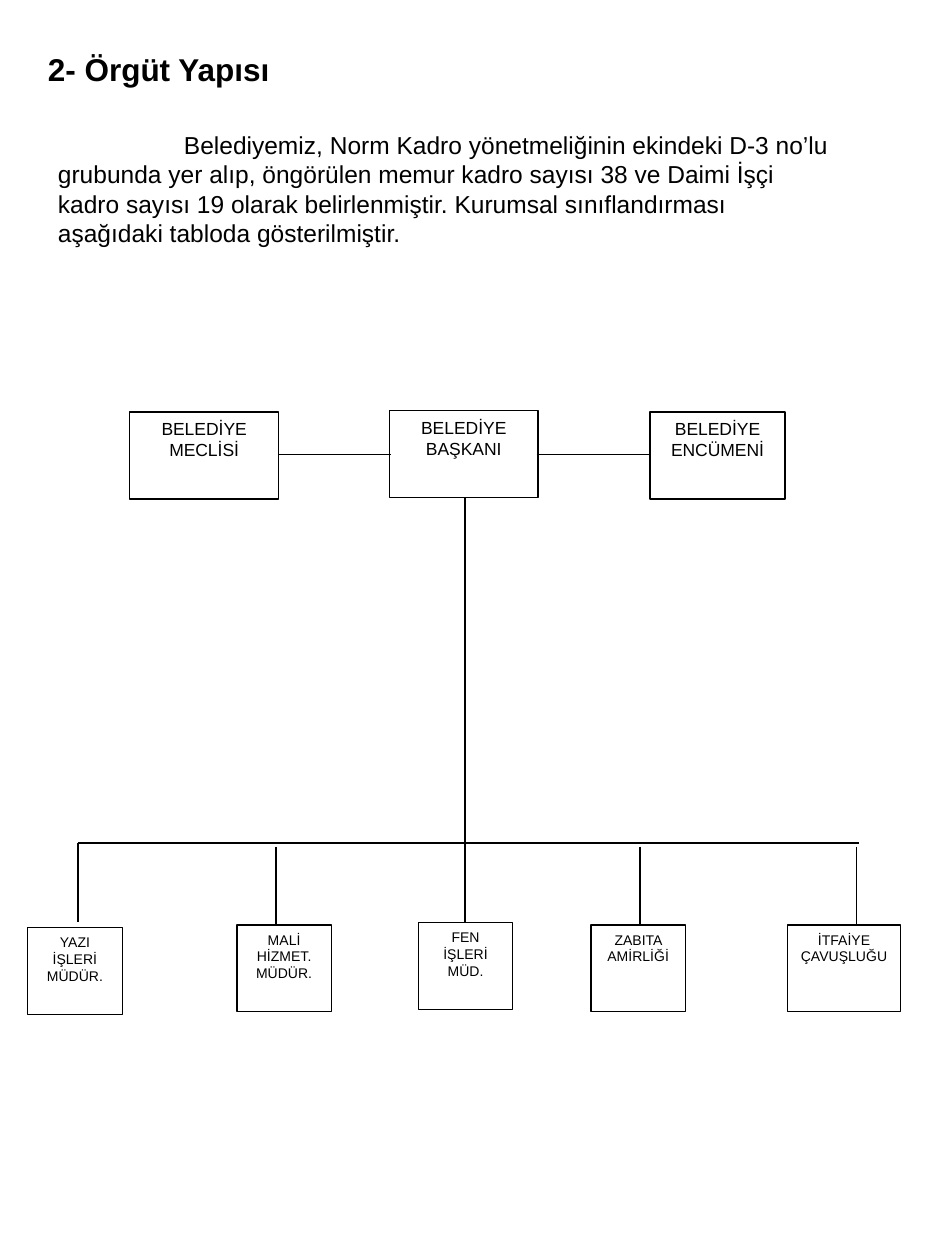
"""Build the municipal organisation chart slide."""
from lxml.etree import SubElement as Sub
from pptx import Presentation
from pptx.dml.color import RGBColor
from pptx.enum.shapes import MSO_CONNECTOR as Link, MSO_SHAPE as Form
from pptx.enum.text import MSO_ANCHOR as Anchor, MSO_AUTO_SIZE as Fit, PP_ALIGN as Align
from pptx.oxml.ns import qn
from pptx.util import Pt

PX = 9144
BLACK = RGBColor(0, 0, 0)
WHITE = RGBColor(255, 255, 255)
FRAME = {"word_wrap": True, "auto_size": Fit.NONE, "vertical_anchor": Anchor.TOP}


def place(shape, box):
    for name, val in zip(("left", "top", "width", "height"), box):
        setattr(shape, name, val * PX)


def write(shape, text, size, align, bold=False, wrap=True):
    frame = shape.text_frame
    frame.text = text
    for name, val in {**FRAME, "word_wrap": wrap}.items():
        setattr(frame, name, val)
    for para in frame.paragraphs:
        for name, val in {"alignment": align, "space_before": Pt(0)}.items():
            setattr(para, name, val)
        font = para.runs[0].font
        for name, val in {"name": "Arial", "size": Pt(size), "bold": bold}.items():
            setattr(font, name, val)
        font.color.rgb = BLACK


deck = Presentation()
deck.slide_width, deck.slide_height = 750 * PX, 1000 * PX
slide = deck.slides.add_slide(deck.slide_layouts[1])
title, body = slide.placeholders

place(title, (28, 35, 198, 40))
write(title, "2- Örgüt Yapısı", 18, Align.LEFT, bold=True, wrap=False)

place(body, (36, 98, 638, 104))
write(body, "Belediyemiz, Norm Kadro yönetmeliğinin ekindeki D-3 no’lu grubunda yer alıp, "
      "öngörülen memur kadro sayısı 38 ve Daimi İşçi kadro sayısı 19 olarak "
      "belirlenmiştir. Kurumsal sınıflandırması aşağıdaki tabloda gösterilmiştir.",
      14, Align.LEFT)
props = body.text_frame.paragraphs[0]._p.get_or_add_pPr()
for name, val in {"marL": 0, "indent": 100 * PX}.items():
    props.set(name, str(val))
Sub(props, qn("a:buNone"))

units = [
    ("BELEDİYE MECLİSİ", 103, 327, 118, 10),
    ("BELEDİYE BAŞKANI", 309, 326, 118, 10),
    ("BELEDİYE ENCÜMENİ", 516, 327, 107, 10),
    ("YAZI İŞLERİ\nMÜDÜR.", 22, 736, 75, 8),
    ("MALİ HİZMET. MÜDÜR.", 188, 734, 75, 8),
    ("FEN İŞLERİ MÜD.", 332, 732, 75, 8),
    ("ZABITA AMİRLİĞİ", 469, 734, 75, 8),
    ("İTFAİYE ÇAVUŞLUĞU", 625, 734, 90, 8),
]
for text, left, top, width, size in units:
    unit = slide.shapes.add_shape(Form.RECTANGLE, 0, 0, 0, 0)
    place(unit, (left, top, width, 69))
    unit.shadow.inherit = False
    unit.fill.solid()
    unit.fill.fore_color.rgb = WHITE
    unit.line.color.rgb = BLACK
    unit.line.width = Pt(0.75)
    write(unit, text, size, Align.CENTER)

sides = [(x, 361, x + 89, 361) for x in (221, 426)]
trunk = [(369, 395, 369, 669), (62, 669, 682, 669)]
drops = [(x, y, x, y + 63) for x, y in
         ((62, 669), (219, 672), (369, 669), (508, 672), (680, 672))]
for ends in sides + trunk + drops:
    link = slide.shapes.add_connector(Link.STRAIGHT, *(n * PX for n in ends))
    link.line.color.rgb = BLACK
    link.line.width = Pt(0.75)
    Sub(link._element.spPr, qn("a:effectLst"))

deck.save("out.pptx")
